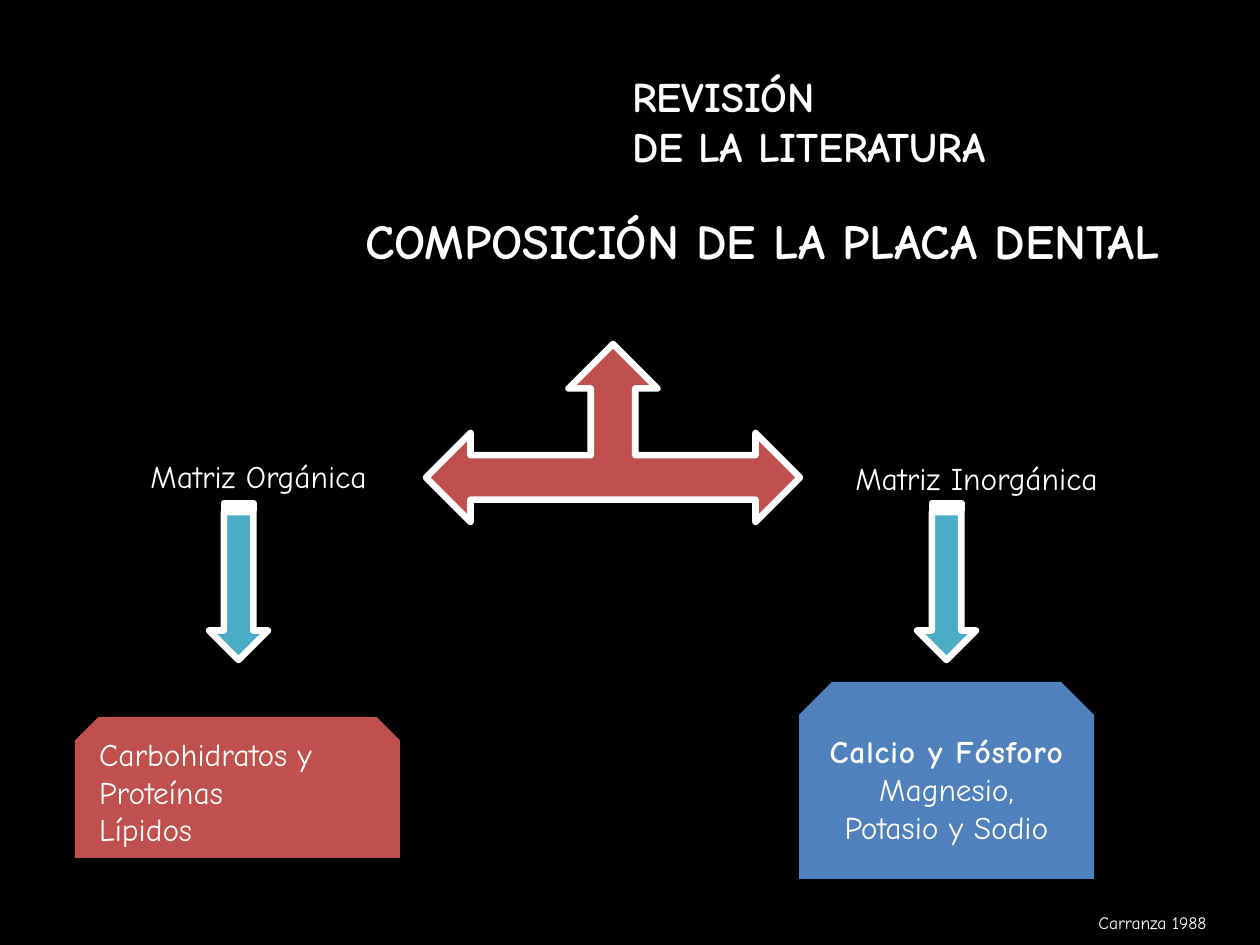
from dataclasses import dataclass
from typing import Optional

from lxml import etree
from pptx import Presentation
from pptx import util as u
from pptx.dml.color import RGBColor
from pptx.enum import shapes, text
from pptx.oxml import ns

PX = 914400 / 126
FONT = "Comic Neue"
BLACK = RGBColor(0x00, 0x00, 0x00)
WHITE = RGBColor(0xFF, 0xFF, 0xFF)
SOFT_WHITE = RGBColor(0xFF, 0xFE, 0xFE)
RED = RGBColor(0xC0, 0x50, 0x4D)
BLUE = RGBColor(0x4F, 0x81, 0xBD)
TEAL = RGBColor(0x4B, 0xAC, 0xC6)
ORANGE = RGBColor(0xE7, 0x87, 0x38)

SNIP = shapes.MSO_SHAPE.SNIP_2_SAME_RECTANGLE
THREE_WAY = shapes.MSO_SHAPE.LEFT_RIGHT_UP_ARROW
STRIPED = shapes.MSO_SHAPE.STRIPED_RIGHT_ARROW
LEFT, CENTER = text.PP_ALIGN.LEFT, text.PP_ALIGN.CENTER
TOP, MIDDLE = text.MSO_ANCHOR.TOP, text.MSO_ANCHOR.MIDDLE


@dataclass
class Box:
    x: int
    y: int
    w: int
    h: int


@dataclass
class Line:
    words: str
    size: int = 18
    bold: bool = False
    color: RGBColor = WHITE
    shadow: bool = False
    outline: Optional[RGBColor] = None
    spacing: int = 0


@dataclass
class Label:
    box: Box
    lines: list[Line]
    align: text.PP_ALIGN = CENTER
    anchor: text.MSO_ANCHOR = TOP
    wrap: bool = True


@dataclass
class Arrow:
    kind: shapes.MSO_SHAPE
    box: Box
    color: RGBColor
    rotation: int = 0


@dataclass
class Card:
    label: Label
    color: RGBColor


ARROWS = [
    Arrow(THREE_WAY, Box(426, 344, 374, 178), RED),
    Arrow(STRIPED, Box(160, 552, 157, 59), TEAL, 90),
    Arrow(STRIPED, Box(868, 552, 157, 59), TEAL, 90),
]
CARDS = [
    Card(Label(Box(799, 682, 295, 197), [
        Line("Calcio y Fósforo", bold=True, color=SOFT_WHITE, shadow=True,
             outline=ORANGE, spacing=50),
        Line("Magnesio, Potasio y Sodio", shadow=True),
    ], anchor=MIDDLE), BLUE),
    Card(Label(Box(75, 717, 325, 141), [
        Line("Carbohidratos y"), Line("Proteínas"), Line("Lípidos"),
    ], LEFT), RED),
]
LABELS = [
    Label(Box(111, 451, 295, 50), [Line("Matriz Orgánica")]),
    Label(Box(829, 453, 295, 50), [Line("Matriz Inorgánica")]),
    Label(Box(1086, 906, 145, 34), [Line("Carranza 1988", 10)], LEFT, wrap=False),
    Label(Box(620, 42, 591, 157), [
        Line("REVISIÓN", 24, True), Line("DE LA LITERATURA", 24, True),
    ], LEFT, MIDDLE),
    Label(Box(249, 204, 1027, 72), [
        Line("COMPOSICIÓN DE LA PLACA DENTAL", 28, True),
    ]),
]


def px(n: int) -> u.Emu:
    return u.Emu(round(n * PX))


def frame(box: Box) -> tuple:
    return px(box.x), px(box.y), px(box.w), px(box.h)


def add_effects(r, line: Line) -> None:
    props = r.font._element if hasattr(r.font, "_element") else r._r.get_or_add_rPr()
    if line.spacing:
        props.set("spc", str(line.spacing))
    if line.outline is not None:
        ln = etree.Element(ns.qn("a:ln"), w=str(u.Pt(1)))
        fill = etree.SubElement(ln, ns.qn("a:solidFill"))
        etree.SubElement(fill, ns.qn("a:srgbClr"), val=str(line.outline))
        props.insert(0, ln)
    if line.shadow:
        effects = etree.Element(ns.qn("a:effectLst"))
        shadow = etree.SubElement(effects, ns.qn("a:outerShdw"), blurRad="25400",
                                  dist="25400", dir="5400000")
        color = etree.SubElement(shadow, ns.qn("a:srgbClr"), val=str(BLACK))
        etree.SubElement(color, ns.qn("a:alpha"), val="45000")
        props.find(ns.qn("a:latin")).addprevious(effects)


def write(sp, label: Label) -> None:
    tf = sp.text_frame
    tf.word_wrap = label.wrap
    tf.vertical_anchor = label.anchor
    for i, line in enumerate(label.lines):
        p = tf.add_paragraph() if i else tf.paragraphs[0]
        p.alignment = label.align
        r = p.add_run()
        r.text = line.words
        r.font.name = FONT
        r.font.size = u.Pt(line.size)
        r.font.bold = line.bold
        r.font.color.rgb = line.color
        add_effects(r, line)


def add_label(s, label: Label) -> None:
    write(s.shapes.add_textbox(*frame(label.box)), label)


def add_filled(s, kind: shapes.MSO_SHAPE, box: Box, color: RGBColor):
    sp = s.shapes.add_shape(kind, *frame(box))
    sp.shadow.inherit = False
    sp.fill.solid()
    sp.fill.fore_color.rgb = color
    return sp


def add_arrow(s, arrow: Arrow) -> None:
    sp = add_filled(s, arrow.kind, arrow.box, arrow.color)
    sp.rotation = arrow.rotation
    sp.line.color.rgb = WHITE
    sp.line.width = u.Pt(3.75)


def add_card(s, card: Card) -> None:
    sp = add_filled(s, SNIP, card.label.box, card.color)
    sp.line.fill.background()
    write(sp, card.label)


def main() -> None:
    prs = Presentation()
    prs.slide_width, prs.slide_height = px(1260), px(945)
    s = prs.slides.add_slide(prs.slide_layouts[6])
    s.background.fill.solid()
    s.background.fill.fore_color.rgb = BLACK
    for arrow in ARROWS:
        add_arrow(s, arrow)
    for card in CARDS:
        add_card(s, card)
    for label in LABELS:
        add_label(s, label)
    prs.save("out.pptx")


if __name__ == "__main__":
    main()
